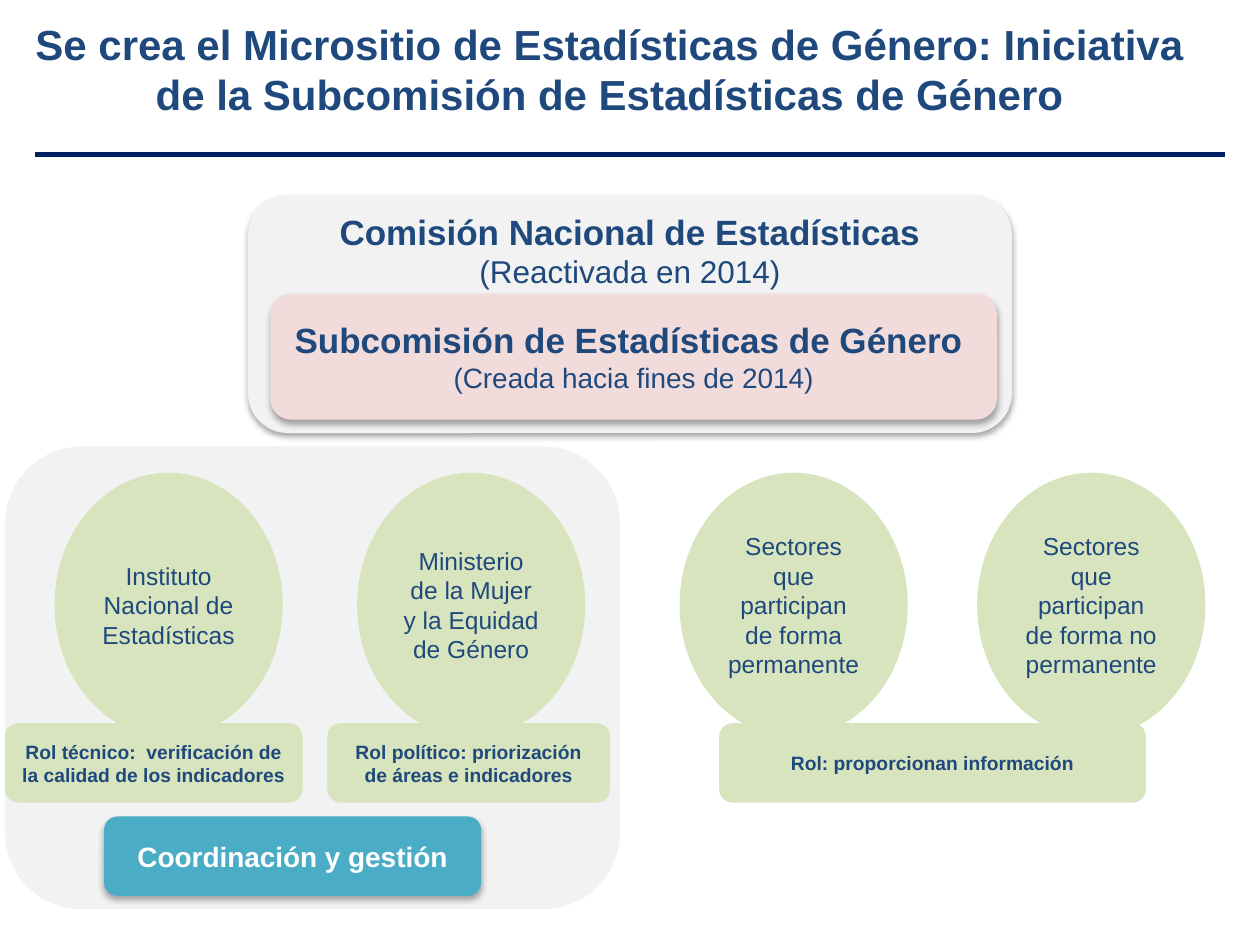
from lxml.etree import SubElement
from pptx import Presentation
from pptx.dml.color import RGBColor
from pptx.enum.shapes import MSO_CONNECTOR, MSO_SHAPE
from pptx.enum.text import MSO_ANCHOR, MSO_AUTO_SIZE, PP_ALIGN
from pptx.oxml.ns import qn
from pptx.util import Cm, Pt

FONT = "Arial"
BLUE = RGBColor(0x1F, 0x49, 0x7D)
NAVY = RGBColor(0x00, 0x20, 0x60)
GRAY = RGBColor(0xF2, 0xF2, 0xF2)
PINK = RGBColor(0xF2, 0xDC, 0xDB)
GREEN = RGBColor(0xD7, 0xE4, 0xBD)
TEAL = RGBColor(0x4B, 0xAC, 0xC6)
WHITE = RGBColor(0xFF, 0xFF, 0xFF)


class SlideBuilder:
    """Holds the text style and the current slide."""

    def __init__(self, slide, font=FONT, color=BLUE):
        self.slide = slide
        self.font = font
        self.color = color

    def fill_text(self, frame, paragraphs, color=None):
        """Each paragraph is a list of runs: (text, size, bold)."""
        frame.word_wrap = True
        for index, runs in enumerate(paragraphs):
            paragraph = frame.add_paragraph() if index else frame.paragraphs[0]
            paragraph.alignment = PP_ALIGN.CENTER
            paragraph.font.name = self.font
            paragraph.font.color.rgb = color or self.color
            for text, size, bold in runs:
                run = paragraph.add_run()
                run.text = text
                font = run.font if len(runs) > 1 else paragraph.font
                font.size = Pt(size)
                font.bold = bold

    def title(self, left, top, width, height, text):
        frame = self.slide.shapes.add_textbox(Cm(left), Cm(top), Cm(width), Cm(height)).text_frame
        self.fill_text(frame, [[(text, 24, True)]])
        frame.auto_size = MSO_AUTO_SIZE.SHAPE_TO_FIT_TEXT

    def rule(self, left, right, top):
        line = self.slide.shapes.add_connector(
            MSO_CONNECTOR.STRAIGHT, Cm(left), Cm(top), Cm(right), Cm(top))
        line.line.color.rgb = NAVY
        line.line.width = Pt(3)
        SubElement(line._element.spPr, qn("a:effectLst"))

    def shape(self, kind, left, top, width, height, fill, paragraphs=(), color=None):
        shape = self.slide.shapes.add_shape(kind, Cm(left), Cm(top), Cm(width), Cm(height))
        shape.shadow.inherit = False
        shape.fill.solid()
        shape.fill.fore_color.rgb = fill
        shape.line.fill.background()
        self.fill_text(shape.text_frame, paragraphs, color)
        return shape

    def box(self, *arguments, **options):
        return self.shape(MSO_SHAPE.ROUNDED_RECTANGLE, *arguments, **options)

    def ellipse(self, left, text):
        self.shape(MSO_SHAPE.OVAL, left, 9.53, 4.6, 5.33, GREEN, [[(text, 14, False)]])

    def role(self, left, width, text):
        self.box(left, 14.58, width, 1.6, GREEN, [[(text, 11, True)]])

    def raised_box(self, *arguments, **options):
        """Rounded box with a soft shadow below it."""
        shape = self.box(*arguments, **options)
        effects = shape._element.spPr.find(qn("a:effectLst"))
        shadow = SubElement(effects, qn("a:outerShdw"), blurRad=str(Pt(3.5)),
                            dist=str(Pt(2.2)), dir="5400000", rotWithShape="0")
        black = SubElement(shadow, qn("a:srgbClr"), val="000000")
        SubElement(black, qn("a:alpha"), val="32000")
        return shape

    def committee(self, *arguments, anchor=MSO_ANCHOR.MIDDLE):
        frame = self.raised_box(*arguments).text_frame
        frame.vertical_anchor = anchor
        frame.margin_left = frame.margin_right = Cm(0.15)
        frame.margin_top = frame.margin_bottom = Cm(0.08)


def main():
    presentation = Presentation()
    presentation.slide_width = Cm(25.4)
    presentation.slide_height = Cm(19.05)
    builder = SlideBuilder(presentation.slides.add_slide(presentation.slide_layouts[6]))

    # Background panel of the coordinating bodies
    builder.box(0.1, 9, 12.4, 9.33, GRAY)

    # Heading
    builder.title(0.4, 0.25, 23.78, 2.31,
                  "Se crea el Micrositio de Estadísticas de Género: "
                  "Iniciativa de la Subcomisión de Estadísticas de Género")
    builder.rule(0.71, 24.69, 3.12)

    # Commission and its subcommission
    builder.committee(5, 3.93, 15.4, 4.8, GRAY, [
        [("Comisión Nacional de Estadísticas ", 20, True), ("(Reactivada en 2014)", 18, False)],
    ], anchor=MSO_ANCHOR.TOP)
    builder.committee(5.45, 5.92, 14.65, 2.54, PINK, [
        [("Subcomisión de Estadísticas de Género ", 20, True)],
        [("(Creada hacia fines de 2014)", 16, False)],
    ])

    # Members
    for left, text in (
        (1.1, "Instituto Nacional de Estadísticas "),
        (7.2, "Ministerio de la Mujer y la Equidad de Género"),
        (13.7, "Sectores que participan de forma permanente"),
        (19.7, "Sectores que participan de forma no permanente"),
    ):
        builder.ellipse(left, text)

    # Roles
    for left, width, text in (
        (0.1, 6, "Rol técnico:  verificación de la calidad de los indicadores"),
        (6.6, 5.7, "Rol político: priorización de áreas e indicadores"),
        (14.5, 8.6, "Rol: proporcionan información"),
    ):
        builder.role(left, width, text)

    # Shared task
    builder.raised_box(2.1, 16.46, 7.6, 1.6, TEAL,
                       [[("Coordinación y gestión", 16, True)]], color=WHITE)

    presentation.save("out.pptx")


if __name__ == "__main__":
    main()
